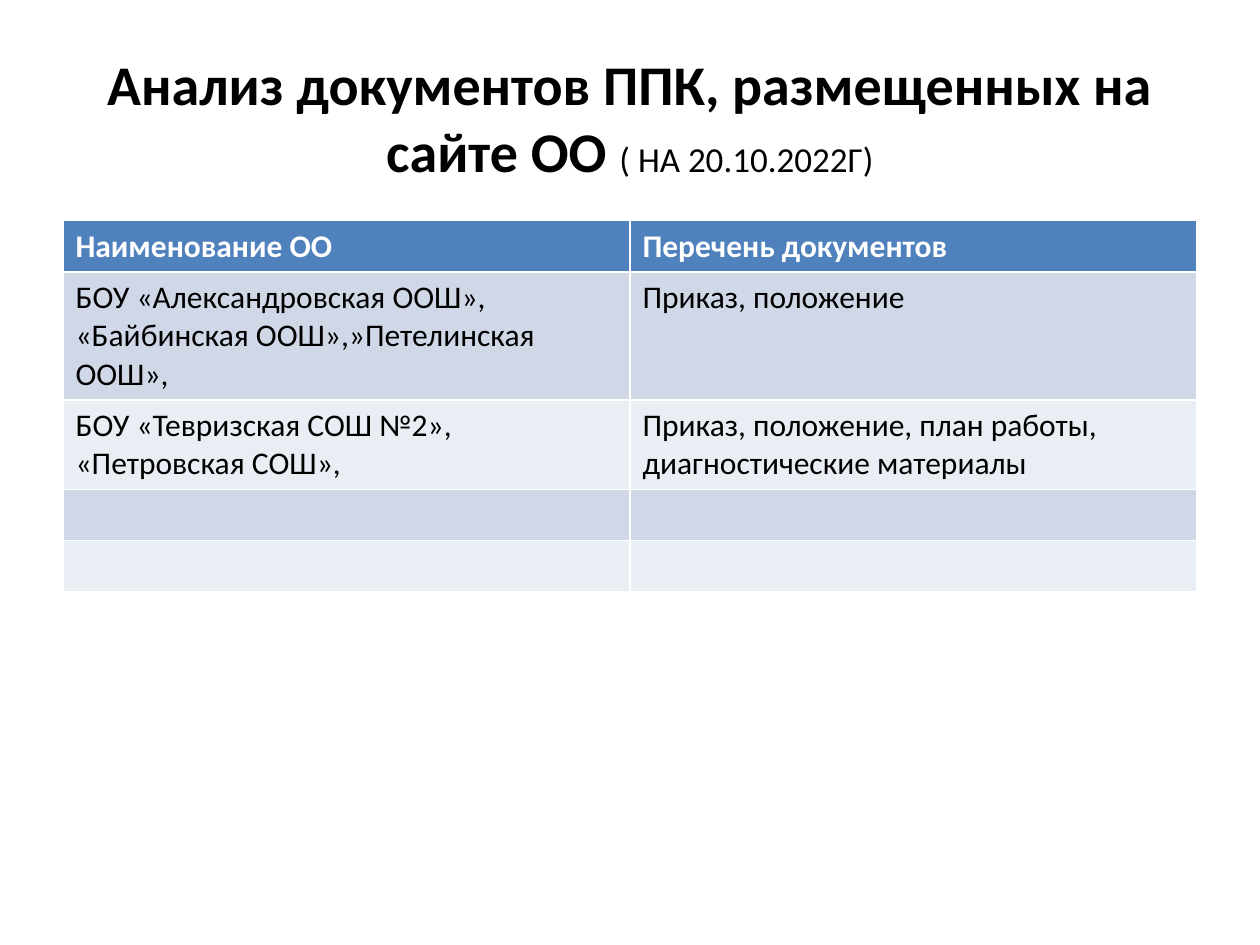
"""Build a slide that lists the documents published on school websites."""
from dataclasses import dataclass

from pptx import Presentation
from pptx.dml.color import RGBColor
from pptx.enum.text import MSO_ANCHOR as Anchor, MSO_AUTO_SIZE as AutoSize, PP_ALIGN as Align
from pptx.util import Cm, Pt

COLORS = {
    "text": "000000",
    "header": "4F81BD",
    "header_text": "FFFFFF",
    "odd_band": "D0D8E8",
    "even_band": "E9EDF4",
}
FONT = "Calibri"
LEFT, WIDTH = Cm(1.27), Cm(22.86)
ROW_HEIGHT = Cm(1.03)


@dataclass
class SchoolRow:
    schools: str = ""
    documents: str = ""


HEADER = SchoolRow("Наименование ОО", "Перечень документов")
ROWS = [
    SchoolRow("БОУ «Александровская ООШ», «Байбинская ООШ»,»Петелинская ООШ»,", "Приказ, положение"),
    SchoolRow(
        "БОУ «Тевризская СОШ №2», «Петровская СОШ»,",
        "Приказ, положение, план работы, диагностические материалы",
    ),
    SchoolRow(),
    SchoolRow(),
]


def style_font(font, size: int, color: str, bold: bool | None = None) -> None:
    font.name = FONT
    font.size = Pt(size)
    font.bold = bold
    font.color.rgb = RGBColor.from_string(COLORS[color])


def add_title(slide) -> None:
    title = slide.shapes.title
    title.left, title.top, title.width, title.height = LEFT, Cm(0.76), WIDTH, Cm(3.18)
    frame = title.text_frame
    frame.word_wrap = True
    frame.auto_size = AutoSize.NONE
    frame.vertical_anchor = Anchor.MIDDLE
    para = frame.paragraphs[0]
    para.alignment = Align.CENTER
    for text, size, bold in (
        ("Анализ документов ППК, размещенных на сайте ОО ", 32, True),
        ("( НА 20.10.2022Г)", 20, False),
    ):
        span = para.add_run()
        span.text = text
        style_font(span.font, size, "text", bold)


def fill_row(table, index: int, row: SchoolRow, fill: str, color: str, bold: bool) -> None:
    table.rows[index].height = ROW_HEIGHT
    for cell, text in zip(table.rows[index].cells, (row.schools, row.documents)):
        cell.fill.solid()
        cell.fill.fore_color.rgb = RGBColor.from_string(COLORS[fill])
        cell.text = text
        style_font(cell.text_frame.paragraphs[0].font, 18, color, bold)


def add_school_table(slide) -> None:
    count = len(ROWS) + 1
    table = slide.shapes.add_table(count, 2, LEFT, Cm(4.45), WIDTH, ROW_HEIGHT * count).table
    fill_row(table, 0, HEADER, "header", "header_text", True)
    for index, row in enumerate(ROWS, start=1):
        fill_row(table, index, row, "odd_band" if index % 2 else "even_band", "text", False)


def main() -> None:
    deck = Presentation()
    deck.slide_width, deck.slide_height = Cm(25.4), Cm(19.05)
    slide = deck.slides.add_slide(deck.slide_layouts.get_by_name("Title Only"))
    add_title(slide)
    add_school_table(slide)
    deck.save("out.pptx")


if __name__ == "__main__":
    main()
